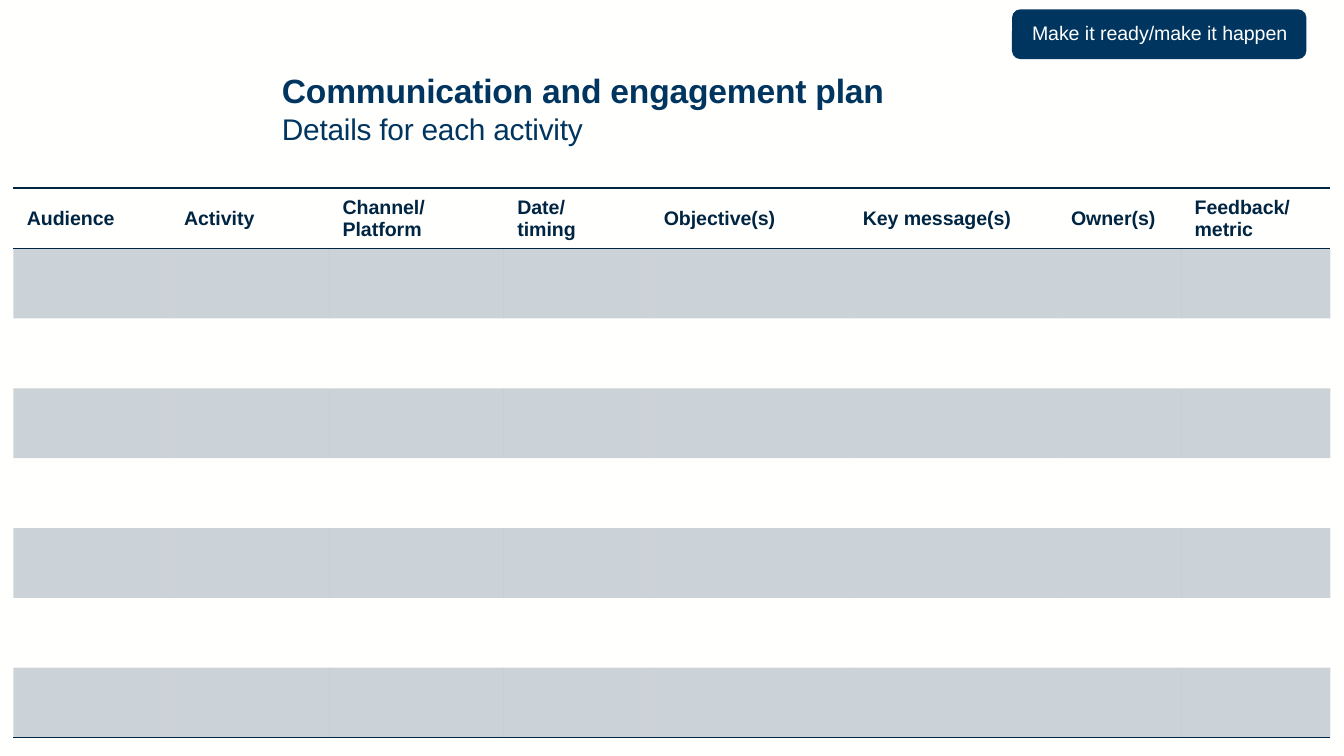
from lxml import etree
from pptx import Presentation
from pptx.dml.color import RGBColor
from pptx.enum import shapes, text
from pptx.oxml import ns
from pptx.util import Inches, Pt

NAVY = RGBColor(0x00, 0x35, 0x5F)
INK = RGBColor(0x00, 0x25, 0x42)
PAPER = RGBColor(0xFF, 0xFF, 0xFE)

HEADINGS = ["Audience", "Activity", "Channel/\nPlatform", "Date/\vtiming",
            "Objective(s)", "Key message(s)", "Owner(s)", "Feedback/\nmetric"]
COLUMN_WIDTHS = [1.17, 1.18, 1.3, 1.09, 1.48, 1.55, 0.92, 1.11]
ACTIVITY_ROWS = 7
HEADING_HEIGHT, ACTIVITY_HEIGHT = 0.37, 0.52
NO_STYLE = "{2D5ABB26-0587-4C30-8999-92F81FD0307C}"


def box(left, top, width, height):
    return [Inches(length) for length in (left, top, width, height)]


def style_font(font, color, size, bold=False):
    font.color.rgb = color
    for name, value in {"name": "Arial", "size": Pt(size), "bold": bold}.items():
        setattr(font, name, value)


def add_child(parent, tag, **attributes):
    return etree.SubElement(parent, ns.qn(tag), attributes)


def style_paragraph(paragraph, color, size, bold=False):
    for run in paragraph.runs:
        style_font(run.font, color, size, bold)
    for line_break in paragraph._p.iter(ns.qn("a:br")):
        add_child(line_break, "a:rPr", sz=str(round(size * 100)))


def add_badge(slide, left, top, width, height):
    badge = slide.shapes.add_shape(shapes.MSO_SHAPE.ROUNDED_RECTANGLE,
                                   *box(left, top, width, height))
    badge.shadow.inherit = False
    badge.fill.solid()
    badge.fill.fore_color.rgb = NAVY
    badge.line.fill.background()

    label = slide.shapes.add_textbox(
        *box(left + 0.03, top + 0.04, width - 0.05, height - 0.09))
    label.text_frame.word_wrap = True
    motto = label.text_frame.paragraphs[0]
    motto.text = "Make it ready/make it happen"
    motto.alignment = text.PP_ALIGN.CENTER
    style_paragraph(motto, PAPER, 10.5)


def add_title(slide, left, top, width, height):
    frame = slide.shapes.add_textbox(*box(left, top, width, height)).text_frame
    frame.word_wrap = True
    frame.vertical_anchor = text.MSO_ANCHOR.MIDDLE
    heading = frame.paragraphs[0]
    heading.text = "Communication and engagement plan\vDetails for each activity"
    for run, size, bold in zip(heading.runs, (18, 16), (True, False)):
        style_font(run.font, NAVY, size, bold)
        run.font._element.set("spc", "-10")


def rule_cell(cell, sides):
    properties = cell._tc.get_or_add_tcPr()
    for index, side in enumerate(sides):
        line = etree.Element(ns.qn(f"a:ln{side}"), w=str(Pt(1)))
        add_child(add_child(line, "a:solidFill"), "a:srgbClr", val=str(INK))
        properties.insert(index, line)


def shade_cell(cell):
    cell.fill.solid()
    cell.fill.fore_color.rgb = INK
    for color in cell._tc.tcPr.iter(ns.qn("a:srgbClr")):
        add_child(color, "a:alpha", val="20000")


def add_plan(slide, left, top, width, height):
    frame = slide.shapes.add_table(ACTIVITY_ROWS + 1, len(HEADINGS),
                                   *box(left, top, width, height))
    plan = frame.table
    plan.first_row = plan.horz_banding = False
    plan._tbl.tblPr.find(ns.qn("a:tableStyleId")).text = NO_STYLE
    for column, column_width in zip(plan.columns, COLUMN_WIDTHS):
        column.width = Inches(column_width)

    for index, row in enumerate(plan.rows):
        row.height = Inches(ACTIVITY_HEIGHT if index else HEADING_HEIGHT)
        for cell in row.cells:
            if index % 2:
                shade_cell(cell)
            else:
                cell.fill.background()
            if index == ACTIVITY_ROWS:
                rule_cell(cell, "B")

    for cell, heading in zip(plan.rows[0].cells, HEADINGS):
        cell.text = heading
        cell.vertical_anchor = text.MSO_ANCHOR.MIDDLE
        for paragraph in cell.text_frame.paragraphs:
            style_paragraph(paragraph, INK, 10.5, True)
        rule_cell(cell, "TB")


def main():
    deck = Presentation()
    deck.slide_width = Inches(10)
    deck.slide_height = deck.slide_width * 9 // 16
    slide = deck.slides.add_slide(deck.slide_layouts[6])
    slide.background.fill.solid()
    slide.background.fill.fore_color.rgb = PAPER
    add_title(slide, 2, 0.37, 5.2, 0.87)
    add_plan(slide, 0.1, 1.4, sum(COLUMN_WIDTHS),
             HEADING_HEIGHT + ACTIVITY_ROWS * ACTIVITY_HEIGHT)
    add_badge(slide, 7.53, 0.07, 2.19, 0.37)
    deck.save("out.pptx")


if __name__ == "__main__":
    main()
